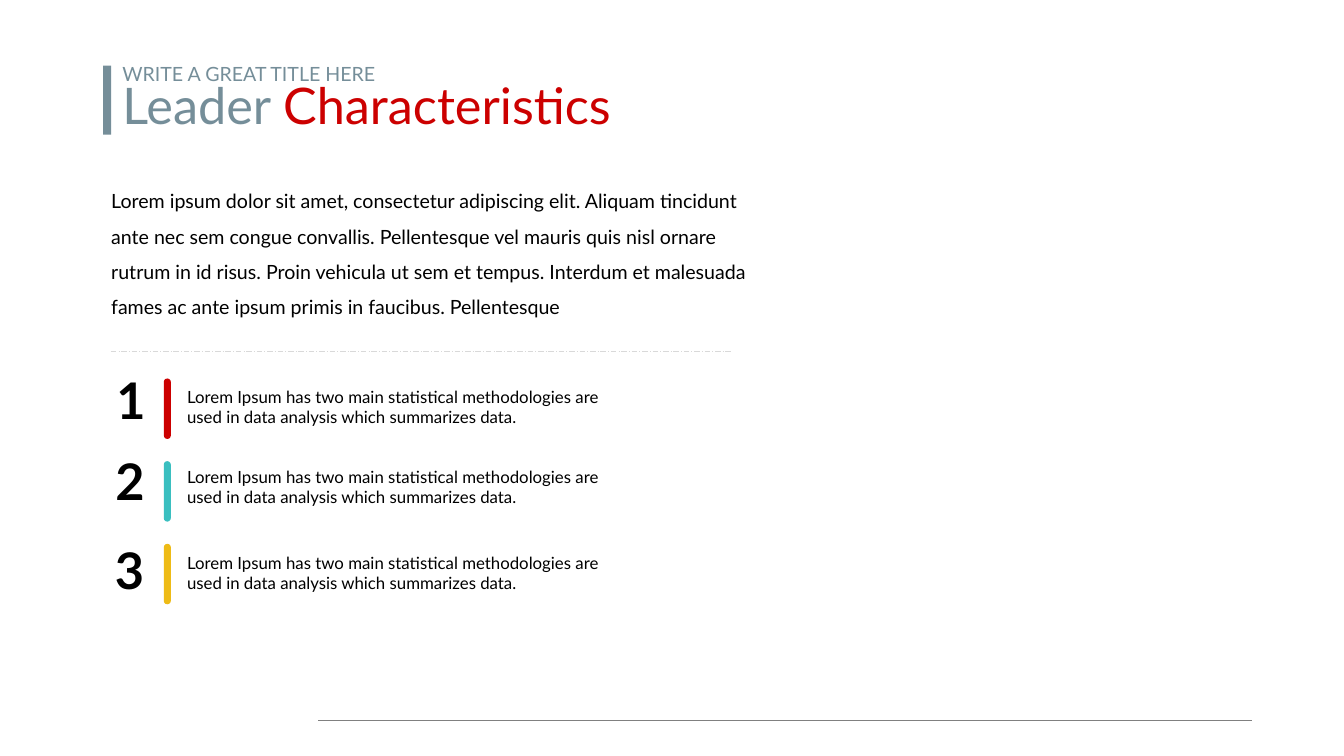
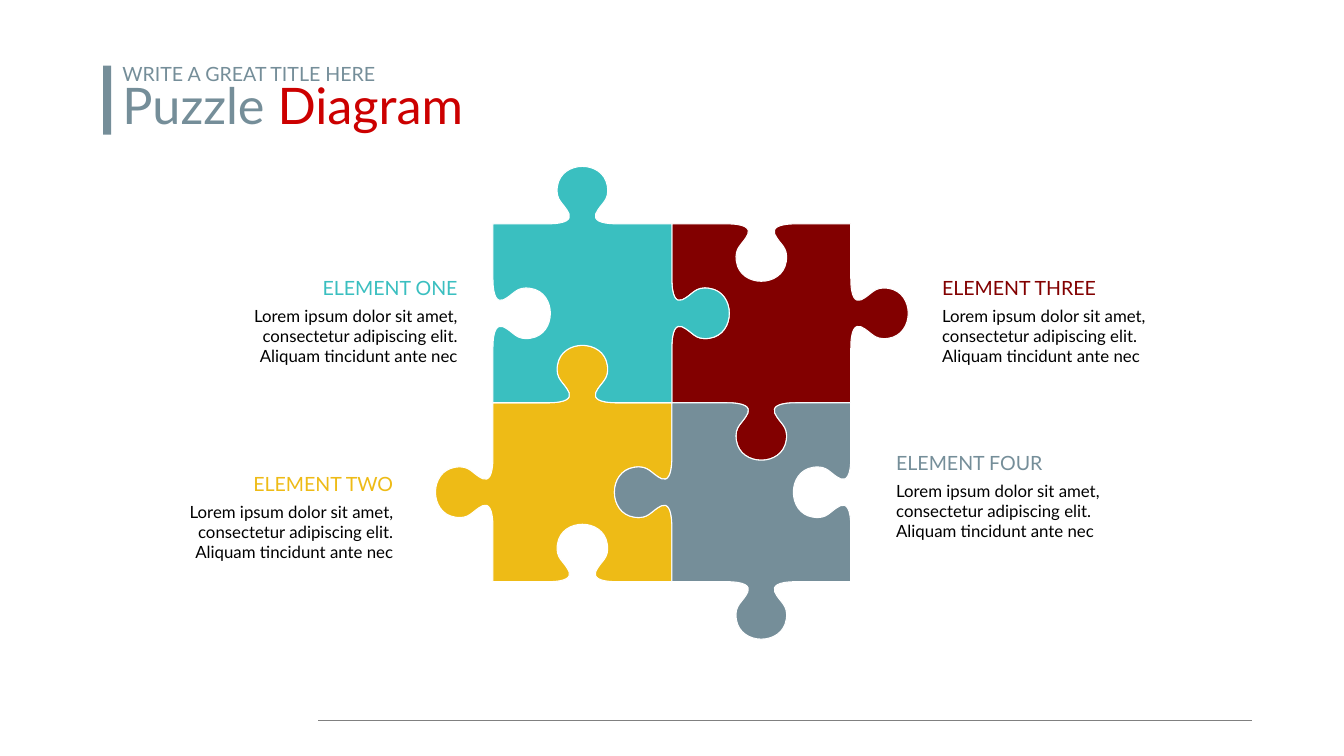
import pptx
import pptx.dml.color
import pptx.enum.dml
import pptx.enum.shapes
import pptx.enum.text
import pptx.oxml.ns
import pptx.util
from dataclasses import dataclass
from lxml import etree

Pt = pptx.util.Pt
qn = pptx.oxml.ns.qn
Align = pptx.enum.text.PP_ALIGN
Anchor = pptx.enum.text.MSO_ANCHOR
Shape = pptx.enum.shapes.MSO_SHAPE


# Theme
@dataclass(frozen=True)
class Theme:
    font: str = "Lato"
    slate: str = "758E99"
    red: str = "CC0000"
    teal: str = "3ABFC0"
    yellow: str = "EEBB16"
    maroon: str = "820000"
    black: str = "000000"
    white: str = "FFFFFF"
    footer: str = "808080"
    divider: str = "D9D9D9"
    display: int = 72
    lead: int = 28
    body: int = 24


THEME = Theme()

# Content
KICKER = "WRITE A GREAT TITLE HERE"
INTRO = (
    "Lorem ipsum dolor sit amet, consectetur adipiscing elit. Aliquam tincidunt "
    "ante nec sem congue convallis. Pellentesque vel mauris quis nisl ornare "
    "rutrum in id risus. Proin vehicula ut sem et tempus. Interdum et malesuada "
    "fames ac ante ipsum primis in faucibus. Pellentesque"
)
POINT_TEXT = (
    "Lorem Ipsum has two main statistical methodologies are used in data analysis "
    "which summarizes data."
)
# colour, number left, number top, text top
POINTS = [
    (THEME.red, 147.6, 520.6, 544.3),
    (THEME.teal, 146.2, 635.8, 658.1),
    (THEME.yellow, 145.4, 763.2, 780.5),
]
ELEMENT_TEXT = (
    "Lorem ipsum dolor sit amet, consectetur adipiscing elit. "
    "Aliquam tincidunt ante nec"
)
# name, colour, aligned edge, top, heading width, text width, alignment
ELEMENTS = [
    ("ELEMENT ONE", THEME.teal, 668, 386.6, 499, 325.4, Align.RIGHT),
    ("ELEMENT TWO", THEME.yellow, 576, 667.4, 460.8, 352.8, Align.RIGHT),
    ("ELEMENT THREE", THEME.maroon, 1331.5, 386.6, 499, 368.6, Align.LEFT),
    ("ELEMENT FOUR", THEME.slate, 1265.8, 636.8, 499, 368.6, Align.LEFT),
]
# colour, column, row, knobs on top, right, bottom, left: 1 outward, -1 inward
PIECES = [
    (THEME.maroon, 1, 0, (-1, 1, 1, -1)),
    (THEME.yellow, 0, 1, (1, -1, -1, 1)),
    (THEME.teal, 0, 0, (1, 1, -1, -1)),
    (THEME.slate, 1, 1, (-1, -1, 1, 1)),
]

# Puzzle geometry
PUZZLE_LEFT, PUZZLE_TOP, PIECE_SIDE = 704.2, 319.8, 255.6
UNITS_PER_POINT = 100
# Left half of a knob as Bezier points: offset from the side's middle, height
HALF_KNOB = [
    (-50, 0), (-22.4, 0), (-16.2, 6.5), (-19.1, 14.4),
    (-26.3, 30.2), (-39, 32.4), (-35.6, 54), (-29.9, 91.4),
]
KNOB = HALF_KNOB + [(-along, out) for along, out in reversed(HALF_KNOB)]
SIDE = [(-PIECE_SIDE / 2, 0)] + KNOB


def rgb(colour):
    return pptx.dml.color.RGBColor.from_string(colour)


# Drawing helpers
def add_text(page, area, spans, size, align=Align.LEFT, inset=(7.2, 3.6),
             spacing=None, anchor=Anchor.TOP, bold=False):
    """Add one paragraph made of (text, colour) spans."""
    box = page.shapes.add_textbox(*map(Pt, area))
    frame = box.text_frame
    frame.word_wrap = True
    frame.auto_size = pptx.enum.text.MSO_AUTO_SIZE.SHAPE_TO_FIT_TEXT
    frame.vertical_anchor = anchor
    frame.margin_left = frame.margin_right = Pt(inset[0])
    frame.margin_top = frame.margin_bottom = Pt(inset[1])
    para = frame.paragraphs[0]
    para.alignment = align
    if spacing:
        para.line_spacing = spacing
    for text, colour in spans:
        span = para.add_run()
        span.text = text
        span.font.name = THEME.font
        span.font.size = Pt(size)
        span.font.bold = bold
        span.font.color.rgb = rgb(colour)


def paint(shape, colour):
    shape.shadow.inherit = False
    shape.fill.solid()
    shape.fill.fore_color.rgb = rgb(colour)
    shape.line.fill.background()


def add_bar(page, kind, area, colour):
    bar = page.shapes.add_shape(kind, *map(Pt, area))
    paint(bar, colour)
    return bar


def add_rule(page, left, right, top, colour, dash=None):
    rule = page.shapes.add_connector(
        pptx.enum.shapes.MSO_CONNECTOR.STRAIGHT, Pt(left), Pt(top), Pt(right), Pt(top))
    rule.line.color.rgb = rgb(colour)
    rule.line.width = Pt(1)
    if dash:
        rule.line.dash_style = dash
    etree.SubElement(rule._element.spPr, qn("a:effectLst"))


def add_page(deck, title, accent):
    """Add a blank page with the shared title block and footer rule."""
    page = deck.slides.add_slide(deck.slide_layouts[6])
    add_rule(page, 455, 1788, 1029.6, THEME.footer)
    add_text(page, (167.8, 118.8, 1104.5, 79.9),
             [(title + " ", THEME.slate), (accent, THEME.red)], THEME.display, spacing=0.8)
    add_text(page, (167.8, 85, 689.8, 41), [(KICKER, THEME.slate)], THEME.lead)
    add_bar(page, Shape.RECTANGLE, (147.4, 93.6, 11.5, 98.8), THEME.slate)
    return page


# Puzzle pieces
def piece_outline(column, row, knobs):
    """Walk the four sides clockwise from the top left corner."""
    half = PIECE_SIDE / 2
    centre_x = PUZZLE_LEFT + PIECE_SIDE * column + half
    centre_y = PUZZLE_TOP + PIECE_SIDE * row + half
    points = []
    dx, dy = 1, 0
    for knob in knobs:
        for along, out in SIDE:
            reach = half + knob * out
            points.append(((centre_x + along * dx + reach * dy) * UNITS_PER_POINT,
                           (centre_y + along * dy - reach * dx) * UNITS_PER_POINT))
        dx, dy = -dy, dx
    return points


def curve_knobs(piece):
    """Join each three knob segments into one Bezier curve."""
    segments = list(piece._element.iter(qn("a:lnTo")))
    for i, segment in enumerate(segments, start=1):
        place = i % len(SIDE) - 2
        if place < 0:
            continue
        if place % 3 == 0:
            curve = etree.Element(qn("a:cubicBezTo"))
            segment.addprevious(curve)
        curve.append(segment[0])
        segment.getparent().remove(segment)


def add_piece(page, colour, column, row, knobs):
    points = piece_outline(column, row, knobs)
    builder = page.shapes.build_freeform(*points[0], scale=Pt(1) / UNITS_PER_POINT)
    builder.add_line_segments(points[1:], close=True)
    piece = builder.convert_to_shape()
    curve_knobs(piece)
    paint(piece, colour)
    piece.line.color.rgb = rgb(THEME.white)
    piece.line.width = Pt(1.5)


# Pages
def add_characteristics(deck):
    page = add_page(deck, "Leader", "Characteristics")
    add_text(page, (139.5, 244.1, 949, 220.3), [(INTRO, THEME.black)], THEME.lead,
             inset=(19.4, 9.4), spacing=1.5, anchor=Anchor.MIDDLE)
    for i, (colour, number_left, number_top, text_top) in enumerate(POINTS):
        add_text(page, (250, text_top, 662.4, 75.6), [(POINT_TEXT, THEME.black)],
                 THEME.body, inset=(17.3, 8.6))
        bar = add_bar(page, Shape.ROUND_2_SAME_RECTANGLE,
                      (234, 540.7 + 118.1 * i, 10.1, 86.4), colour)
        bar.adjustments[0] = bar.adjustments[1] = 0.5
        add_text(page, (number_left, number_top, 79.2, 101.5),
                 [(str(i + 1), THEME.black)], THEME.display, Align.CENTER,
                 inset=(14.4, 7.2), bold=True)
    add_rule(page, 158.4, 1046.2, 501.8, THEME.divider,
             pptx.enum.dml.MSO_LINE.LONG_DASH_DOT)


def add_puzzle(deck):
    page = add_page(deck, "Puzzle", "Diagram")
    for piece in PIECES:
        add_piece(page, *piece)
    for name, colour, edge, top, name_width, text_width, align in ELEMENTS:
        for text, ink, size, offset, width, height in (
            (name, colour, THEME.lead, 0, name_width, 48.2),
            (ELEMENT_TEXT, THEME.black, THEME.body, 42.2, text_width, 101.5),
        ):
            left = edge - width if align == Align.RIGHT else edge
            add_text(page, (left, top + offset, width, height), [(text, ink)], size,
                     align, inset=(14.4, 7.2))


def main():
    deck = pptx.Presentation()
    deck.slide_width, deck.slide_height = Pt(1920), Pt(1080)
    add_characteristics(deck)
    add_puzzle(deck)
    deck.save("out.pptx")


if __name__ == "__main__":
    main()
